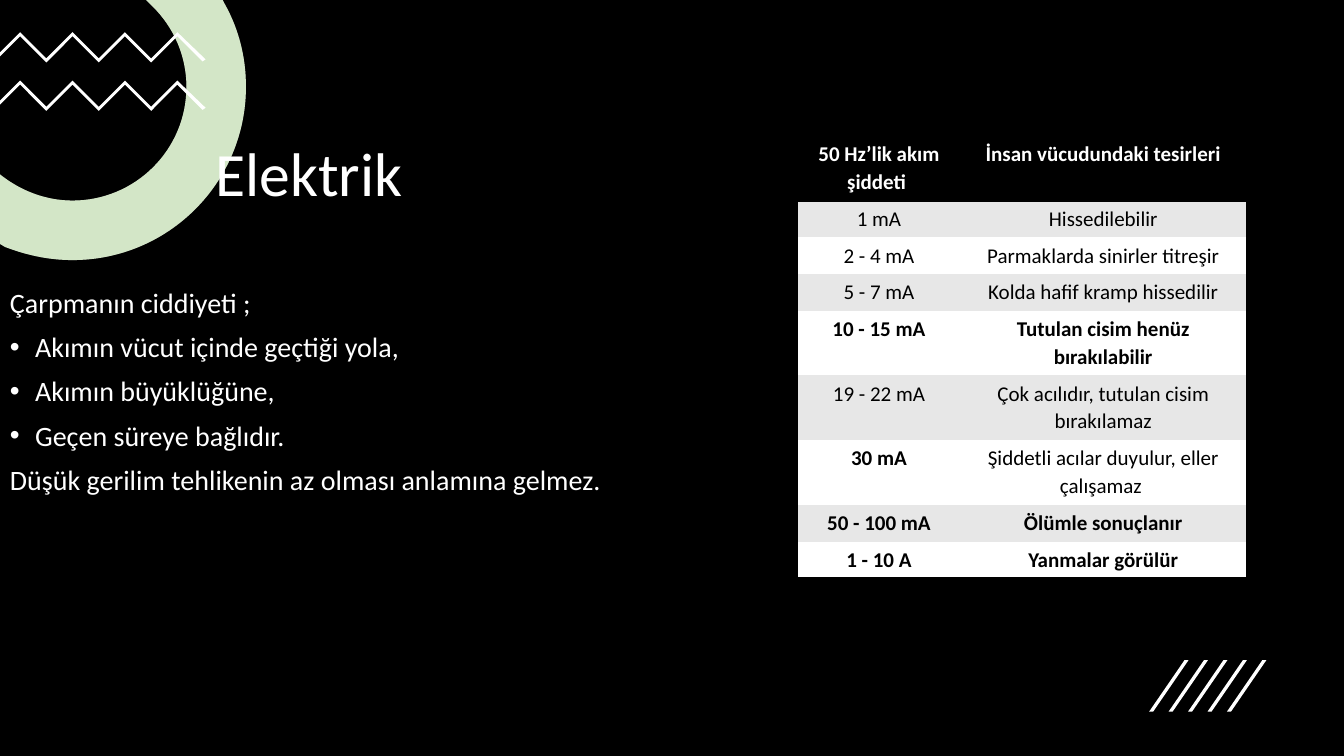
from lxml.etree import SubElement
from pptx import Presentation
from pptx.dml.color import RGBColor
from pptx.enum.shapes import MSO_SHAPE
from pptx.enum.text import MSO_ANCHOR, PP_ALIGN
from pptx.oxml.ns import qn
from pptx.util import Inches, Pt

# The slide is a grid of square cells, a tenth of an inch wide.
CELL = Inches(0.1)
COLUMNS, ROWS = 133.33, 75
FONT = "Calibri"
BLACK, WHITE, GRAY, GREEN = "000000", "FFFFFF", "E7E7E7", "70AD47"

BODY = [
    ("Çarpmanın ciddiyeti ;", False),
    ("Akımın vücut içinde geçtiği yola,", True),
    ("Akımın büyüklüğüne,", True),
    ("Geçen süreye bağlıdır.", True),
    ("Düşük gerilim tehlikenin az olması anlamına gelmez.", False),
]

# current, effect, bold current, bold effect, row height in cells
ONE_LINE, TWO_LINES = 3.64, 6.42
EFFECTS = [
    ("50 Hz’lik akım şiddeti ", "İnsan vücudundaki tesirleri", True, True, TWO_LINES),
    ("1 mA", "Hissedilebilir", False, False, ONE_LINE),
    ("2 - 4 mA", "Parmaklarda sinirler titreşir", False, False, ONE_LINE),
    ("5 - 7 mA", "Kolda hafif kramp hissedilir", False, False, ONE_LINE),
    ("10 - 15 mA", "Tutulan cisim henüz bırakılabilir", True, True, TWO_LINES),
    ("19 - 22 mA", "Çok acılıdır, tutulan cisim bırakılamaz", False, False, TWO_LINES),
    ("30 mA", "Şiddetli acılar duyulur, eller çalışamaz ", True, False, TWO_LINES),
    ("50 - 100 mA", "Ölümle sonuçlanır", True, True, ONE_LINE),
    ("1 - 10 A", "Yanmalar görülür", True, True, ONE_LINE),
]

# Each piece is a line to one point, or a curve of two handles and an end.
RING = [
    [(14.5, 0)],
    [(22.1, 0)],
    [(22.3, 0.4)],
    [(23.7, 2.9), (24.4, 5.7), (24.4, 8.6)],
    [(24.4, 18.1), (16.7, 25.8), (7.2, 25.8)],
    [(4.8, 25.8), (2.6, 25.3), (0.5, 24.5)],
    [(0, 24.2)],
    [(0, 17.3)],
    [(2, 18.9), (4.5, 19.9), (7.2, 19.9)],
    [(13.4, 19.9), (18.5, 14.9), (18.5, 8.6)],
    [(18.5, 5.5), (17.2, 2.7), (15.2, 0.7)],
]


def cells(count):
    return round(count * CELL)


def color(value):
    return RGBColor.from_string(value)


def paint(shape, fill, opacity=None):
    shape.shadow.inherit = False
    shape.fill.solid()
    shape.fill.fore_color.rgb = color(fill)
    shape.line.fill.background()
    if opacity is not None:
        tint = shape.fill._xPr.find(".//" + qn("a:srgbClr"))
        SubElement(tint, qn("a:alpha"), val=str(opacity * 1000))


def add_outline(shapes, points, fill, opacity=None):
    corners = [(cells(x), cells(y)) for x, y in points]
    builder = shapes.build_freeform(*corners[0])
    builder.add_line_segments(corners[1:], close=True)
    shape = builder.convert_to_shape()
    paint(shape, fill, opacity)
    return shape


def bend(shape, pieces):
    """Turn the three lines of each curved piece into one Bézier curve."""
    lines = iter(shape._element.findall(".//" + qn("a:lnTo")))
    for piece in pieces[1:]:
        legs = [next(lines) for _ in piece]
        if len(legs) == 3:
            curve = legs[0].makeelement(qn("a:cubicBezTo"))
            legs[0].addprevious(curve)
            for leg in legs:
                curve.append(leg[0])
                leg.getparent().remove(leg)


def add_ring(page, fill, opacity=None):
    points = [point for piece in RING for point in piece]
    bend(add_outline(page.shapes, points, fill, opacity), RING)


def add_zigzag(page, top):
    stroke = 0.4
    corners = [(2 + 2.6 * turn, top + 2.6 * (turn % 2)) for turn in range(7)]
    underside = [(x, y + stroke) for x, y in reversed(corners)]
    right_end = [(20.4, top + 2.7), (20.1, top + 2.9)]
    left_end = [(0, top + 2.4), (0, top + 2)]
    add_outline(page.shapes, corners + right_end + underside + left_end, WHITE)


def add_slashes(page):
    group = page.shapes.add_group_shape()
    top, bottom = 65.5, 70.6
    for index in range(5):
        left = 114 + 1.93 * index
        points = [(left + 0.4, bottom), (left, bottom),
                  (left + 3.5, top), (left + 3.9, top)]
        add_outline(group.shapes, points, WHITE)


def write(para, text, size, ink, bold=False):
    span = para.add_run()
    span.text = text
    span.font.name = FONT
    span.font.size = Pt(size)
    span.font.bold = bold
    span.font.color.rgb = color(ink)


def add_bullet(para):
    properties = para._p.get_or_add_pPr()
    properties.set("marL", str(cells(2.5)))
    properties.set("indent", str(cells(-2.5)))
    SubElement(properties, qn("a:buFont"), typeface="Arial")
    SubElement(properties, qn("a:buChar"), char="•")


def add_text(page, place, lines, size, anchor, align, space_before=0):
    """Lines are pairs of a text and whether it has a bullet."""
    frame = page.shapes.add_textbox(*map(cells, place)).text_frame
    frame.word_wrap = True
    frame.vertical_anchor = anchor
    for index, (text, bulleted) in enumerate(lines):
        para = frame.add_paragraph() if index else frame.paragraphs[0]
        para.alignment = align
        para.line_spacing = 0.9
        para.space_before = Pt(space_before)
        if bulleted:
            add_bullet(para)
        write(para, text, size, WHITE)


def set_borders(cell, top, bottom):
    """Black rules where asked for, and no line on the other sides."""
    properties = cell._tc.get_or_add_tcPr()
    for side, drawn in (("L", False), ("R", False), ("T", top), ("B", bottom)):
        line = SubElement(properties, qn("a:ln" + side), w=str(Pt(2)))
        if drawn:
            fill = SubElement(line, qn("a:solidFill"))
            SubElement(fill, qn("a:srgbClr"), val=BLACK)
        else:
            SubElement(line, qn("a:noFill"))


def fill_cell(cell, text, bold, fill, ink):
    cell.margin_left = cell.margin_right = cells(0.8)
    cell.margin_top = cell.margin_bottom = cells(0.4)
    cell.fill.solid()
    cell.fill.fore_color.rgb = color(fill)
    para = cell.text_frame.paragraphs[0]
    para.alignment = PP_ALIGN.CENTER
    para.line_spacing = 1.07
    write(para, text, 15, ink, bold)


def add_effects_table(page, left, top, widths):
    height = sum(entry[-1] for entry in EFFECTS)
    place = map(cells, (left, top, sum(widths), height))
    table = page.shapes.add_table(len(EFFECTS), len(widths), *place).table
    table.horz_banding = False
    for column, width in zip(table.columns, widths):
        column.width = cells(width)
    last = len(EFFECTS) - 1
    for index, (current, effect, strong, strong_effect, tall) in enumerate(EFFECTS):
        table.rows[index].height = cells(tall)
        fill = BLACK if index == 0 else GRAY if index % 2 else WHITE
        ink = BLACK if index else WHITE
        entries = [(current, strong), (effect, strong_effect)]
        for column, (text, bold) in enumerate(entries):
            cell = table.cell(index, column)
            set_borders(cell, top=index < 2, bottom=index in (0, last))
            fill_cell(cell, text, bold, fill, ink)


def main():
    deck = Presentation()
    deck.slide_width, deck.slide_height = cells(COLUMNS), cells(ROWS)
    page = deck.slides.add_slide(deck.slide_layouts[6])
    backdrop = page.shapes.add_shape(
        MSO_SHAPE.RECTANGLE, 0, 0, deck.slide_width, deck.slide_height)
    paint(backdrop, BLACK)
    add_ring(page, WHITE)
    add_ring(page, GREEN, opacity=30)
    for top in (3.2, 8):
        add_zigzag(page, top)
    add_text(page, (20.4, 6.9, 52.9, 14.4), [("Elektrik", False)], 44,
             MSO_ANCHOR.BOTTOM, PP_ALIGN.LEFT)
    add_text(page, (0, 28.2, 73.2, 39.3), BODY, 20,
             MSO_ANCHOR.TOP, PP_ALIGN.JUSTIFY, space_before=10)
    add_slashes(page)
    add_effects_table(page, 79.15, 13.5, (16.1, 28.4))
    deck.save("out.pptx")


if __name__ == "__main__":
    main()
